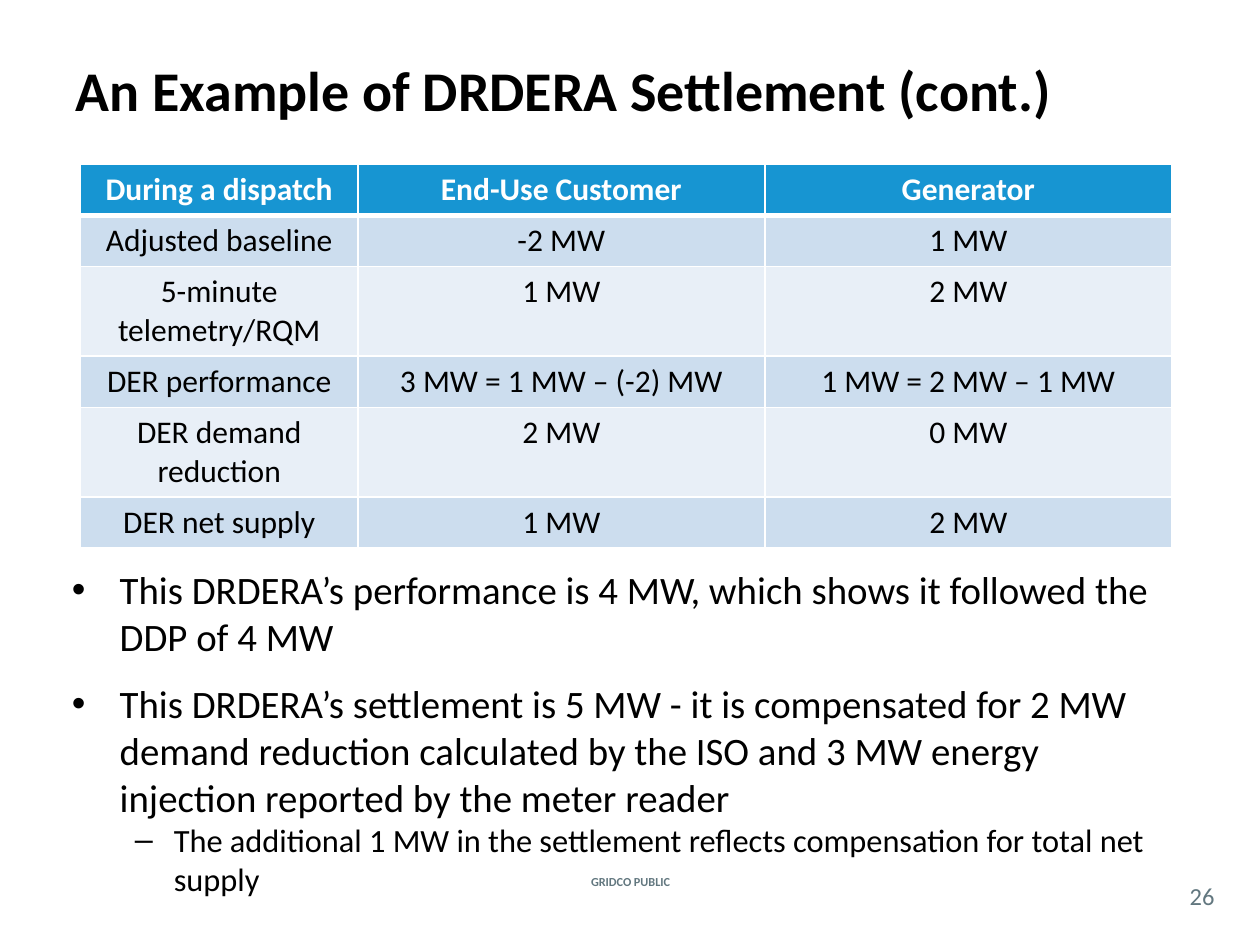
from typing import NamedTuple

from lxml import etree
from pptx import Presentation
from pptx.dml.color import RGBColor
from pptx.enum.text import MSO_ANCHOR, MSO_AUTO_SIZE, PP_ALIGN
from pptx.oxml.ns import qn
from pptx.util import Inches, Pt

LEFT, CENTER = PP_ALIGN.LEFT, PP_ALIGN.CENTER
TOP, MIDDLE = MSO_ANCHOR.TOP, MSO_ANCHOR.MIDDLE
NO_FIT = MSO_AUTO_SIZE.NONE

BLACK = RGBColor(0x00, 0x00, 0x00)
WHITE = RGBColor(0xFF, 0xFF, 0xFF)
GREY = RGBColor(0x62, 0x77, 0x7F)
BLUE = RGBColor(0x17, 0x95, 0xD2)
BAND_DARK = RGBColor(0xCC, 0xDD, 0xEE)
BAND_LIGHT = RGBColor(0xE8, 0xEF, 0xF7)

FONT = "Calibri"
SLIDE_W, SLIDE_H = Inches(10), Inches(7.5)


class Box(NamedTuple):
    """Left, top, width and height in percent of the slide."""
    x: float
    y: float
    w: float
    h: float


class Bullet(NamedTuple):
    text: str
    level: int
    mark: str
    size: float
    margin: float
    hang: float
    before: float


class Label(NamedTuple):
    text: str
    box: Box
    size: float
    bold: bool
    inset: float


TITLE_BOX = Box(5, 1.07, 90, 16.67)
BODY_BOX = Box(4.7, 59.2, 90, 35.07)
TABLE_BOX = Box(6.4, 17.4, 86.6, 40.54)
COLUMNS = (22, 32.3, 32.3)
ROW_H, TALL_ROW_H = 5.4, 9.47
TALL_ROWS = (2, 4)

CELLS = (
    ("During a dispatch", "End-Use Customer", "Generator"),
    ("Adjusted baseline", "-2 MW", "1 MW"),
    ("5-minute telemetry/RQM", "1 MW", "2 MW"),
    ("DER performance", "3 MW = 1 MW – (-2) MW", "1 MW = 2 MW – 1 MW"),
    ("DER demand reduction", "2 MW", "0 MW"),
    ("DER net supply", "1 MW", "2 MW"),
)
BULLETS = (
    Bullet("This DRDERA’s performance is 4 MW, which shows it followed the DDP of 4 MW",
           0, "•", 22.2, 0.38, 0.38, 0),
    Bullet("This DRDERA’s settlement is 5 MW - it is compensated for 2 MW demand reduction "
           "calculated by the ISO and 3 MW energy injection reported by the meter reader",
           0, "•", 22.2, 0.38, 0.38, 12),
    Bullet("The additional 1 MW in the settlement reflects compensation for total net supply",
           1, "–", 18.5, 0.81, 0.31, 0),
)
LABELS = (
    Label("GRIDCO PUBLIC", Box(42.7, 90, 14.7, 6.67), 7, True, 0.1),
    Label("26", Box(93.3, 92.8, 4.2, 3.87), 14, False, 0),
)


def across(percent: float) -> int:
    return int(SLIDE_W * percent / 100)


def down(percent: float) -> int:
    return int(SLIDE_H * percent / 100)


def frame(box: Box) -> tuple:
    return across(box.x), down(box.y), across(box.w), down(box.h)


def style(p, size: float, color: RGBColor, bold: bool = False, align=LEFT) -> None:
    p.alignment = align
    for r in p.runs:
        r.font.name, r.font.size, r.font.bold = FONT, Pt(size), bold
        r.font.color.rgb = color


def place(sp, box: Box, anchor):
    sp.left, sp.top, sp.width, sp.height = frame(box)
    tf = sp.text_frame
    tf.word_wrap, tf.auto_size, tf.vertical_anchor = True, NO_FIT, anchor
    return tf


def set_borders(cell, bottom: float) -> None:
    tc_pr = cell._tc.get_or_add_tcPr()
    for side, width in (("L", 1), ("R", 1), ("T", 1), ("B", bottom)):
        ln = etree.SubElement(tc_pr, qn(f"a:ln{side}"), w=str(Pt(width)))
        fill = etree.SubElement(ln, qn("a:solidFill"))
        etree.SubElement(fill, qn("a:srgbClr"), val=str(WHITE))


def add_bullet(p, item: Bullet) -> None:
    p.text, p.level = item.text, item.level
    p.space_before = Pt(item.before)
    p_pr = p._p.get_or_add_pPr()
    p_pr.set("marL", str(Inches(item.margin)))
    p_pr.set("indent", str(-Inches(item.hang)))
    etree.SubElement(p_pr, qn("a:buFont"), typeface="Arial")
    etree.SubElement(p_pr, qn("a:buChar"), char=item.mark)
    style(p, item.size, BLACK)


def add_label(slide, label: Label) -> None:
    sp = slide.shapes.add_textbox(*frame(label.box))
    tf = place(sp, label.box, MIDDLE)
    inset = Inches(label.inset)
    tf.margin_left = tf.margin_right = inset
    tf.margin_top = tf.margin_bottom = inset // 2
    tf.text = label.text
    style(tf.paragraphs[0], label.size, GREY, label.bold, CENTER)


def add_settlement_table(slide) -> None:
    table = slide.shapes.add_table(len(CELLS), len(COLUMNS), *frame(TABLE_BOX)).table
    for column, width in zip(table.columns, COLUMNS):
        column.width = across(width)
    for i, texts in enumerate(CELLS):
        header = i == 0
        table.rows[i].height = down(TALL_ROW_H if i in TALL_ROWS else ROW_H)
        band = BLUE if header else BAND_DARK if i % 2 else BAND_LIGHT
        for j, text in enumerate(texts):
            cell = table.cell(i, j)
            set_borders(cell, 3 if header else 1)
            cell.fill.solid()
            cell.fill.fore_color.rgb = band
            cell.text = text
            style(cell.text_frame.paragraphs[0], 18, WHITE if header else BLACK,
                  header, CENTER)


def main() -> None:
    prs = Presentation()
    prs.slide_width, prs.slide_height = SLIDE_W, SLIDE_H
    slide = prs.slides.add_slide(prs.slide_layouts[1])

    # Footer marking and page number
    for label in LABELS:
        add_label(slide, label)

    # Title
    tf = place(slide.shapes.title, TITLE_BOX, MIDDLE)
    tf.text = "An Example of DRDERA Settlement (cont.)"
    style(tf.paragraphs[0], 32, BLACK, True)

    # Conclusions
    tf = place(slide.placeholders[1], BODY_BOX, TOP)
    for i, item in enumerate(BULLETS):
        add_bullet(tf.add_paragraph() if i else tf.paragraphs[0], item)

    # Settlement figures
    add_settlement_table(slide)
    prs.save("out.pptx")


if __name__ == "__main__":
    main()
